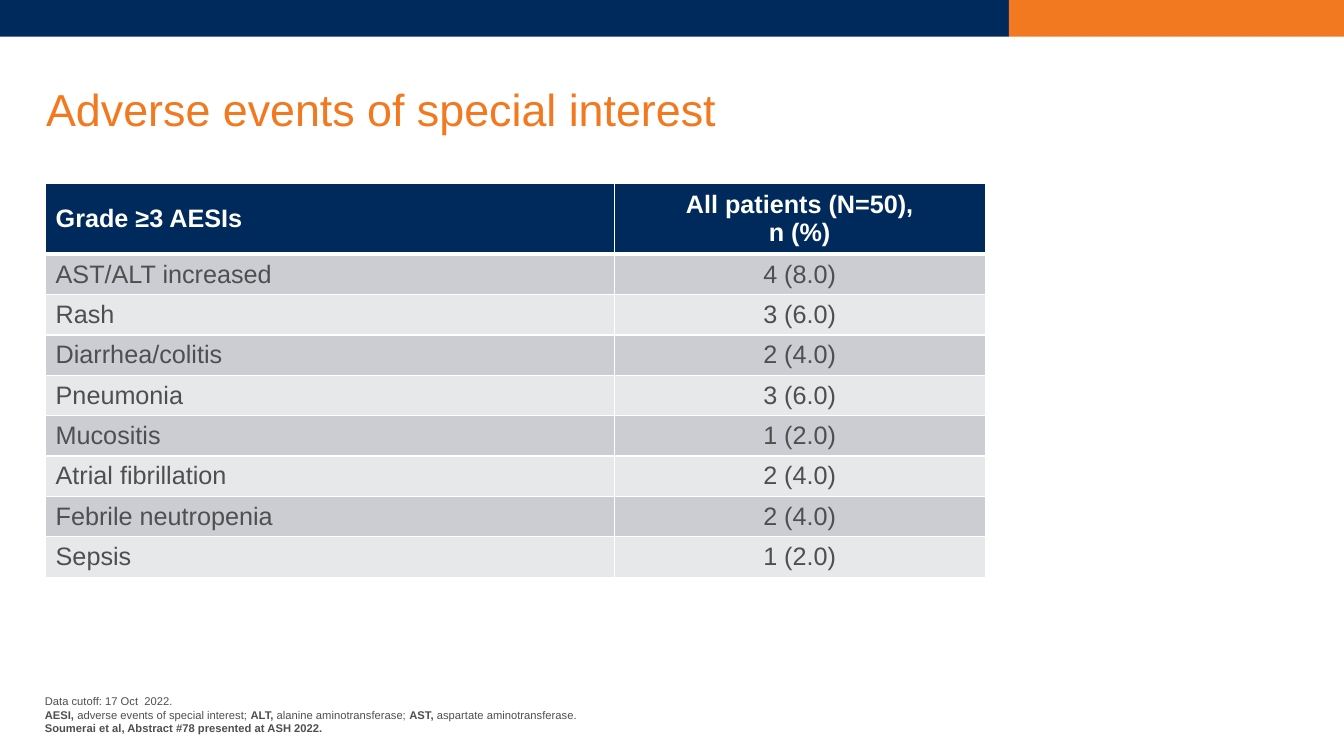
from lxml import etree
from pptx import Presentation
from pptx.dml.color import RGBColor
from pptx.enum.shapes import MSO_SHAPE
from pptx.enum.text import MSO_ANCHOR, PP_ALIGN
from pptx.oxml.ns import qn
from pptx.util import Pt

RECT = MSO_SHAPE.RECTANGLE
MIDDLE, BOTTOM = MSO_ANCHOR.MIDDLE, MSO_ANCHOR.BOTTOM
LEFT, CENTER = PP_ALIGN.LEFT, PP_ALIGN.CENTER

NAVY, ORANGE, GREY, WHITE = "002A5C", "F37920", "4E4F4E", "FFFFFF"
BANDS = ["CCCDD2", "E7E8EA"]


def rgb(value):
    return RGBColor.from_string(value)


class SlideBuilder:
    font = "Arial"

    def __init__(self, slide):
        self.s = slide

    def bar(self, x, y, w, h, color):
        sp = self.s.shapes.add_shape(RECT, Pt(x), Pt(y), Pt(w), Pt(h))
        sp.shadow.inherit = False
        sp.fill.solid()
        sp.fill.fore_color.rgb = rgb(color)
        sp.line.fill.background()

    def fill_text(self, tf, paragraphs, size, color, align=LEFT, spacing=1.0):
        """Each paragraph is a list of (text, bold) runs."""
        for i, runs in enumerate(paragraphs):
            p = tf.add_paragraph() if i else tf.paragraphs[0]
            p.alignment, p.line_spacing = align, spacing
            for text, bold in runs:
                r = p.add_run()
                r.text = text
                formats = {"name": self.font, "size": Pt(size), "bold": bold}
                for name, value in formats.items():
                    setattr(r.font, name, value)
                r.font.color.rgb = rgb(color)

    def text(self, x, y, w, h, paragraphs, size, color, anchor, spacing=1.0):
        tf = self.s.shapes.add_textbox(Pt(x), Pt(y), Pt(w), Pt(h)).text_frame
        formats = {"word_wrap": True, "vertical_anchor": anchor,
                   "margin_left": 0, "margin_right": 0,
                   "margin_top": 0, "margin_bottom": 0}
        for name, value in formats.items():
            setattr(tf, name, value)
        self.fill_text(tf, paragraphs, size, color, spacing=spacing)

    def borders(self, cell, widths):
        tcPr = cell._tc.get_or_add_tcPr()
        for i, (side, width) in enumerate(widths.items()):
            ln = etree.Element(qn("a:ln" + side), w=str(Pt(width)))
            fill = etree.SubElement(ln, qn("a:solidFill"))
            etree.SubElement(fill, qn("a:srgbClr"), val=WHITE)
            tcPr.insert(i, ln)

    def table(self, x, y, col_widths, head_height, row_height, rows, size):
        heights = [head_height] + [row_height] * (len(rows) - 1)
        table = self.s.shapes.add_table(
            len(rows), len(col_widths), Pt(x), Pt(y),
            Pt(sum(col_widths)), Pt(sum(heights))).table
        for column, width in zip(table.columns, col_widths):
            column.width = Pt(width)
        for i, values in enumerate(rows):
            table.rows[i].height = Pt(heights[i])
            head = i == 0
            for j, value in enumerate(values):
                cell = table.cell(i, j)
                cell.vertical_anchor = MIDDLE
                cell.fill.solid()
                cell.fill.fore_color.rgb = rgb(NAVY if head else BANDS[(i - 1) % 2])
                self.borders(cell, {"L": 1, "R": 1, "T": 3 if i == 1 else 1,
                                    "B": 3 if head else 1})
                self.fill_text(cell.text_frame,
                               [[(line, head)] for line in value.split("\n")],
                               size, WHITE if head else GREY, CENTER if j else LEFT)


def main():
    prs = Presentation()
    prs.slide_width, prs.slide_height = Pt(960), Pt(540)
    b = SlideBuilder(prs.slides.add_slide(prs.slide_layouts[6]))

    # Top band
    b.bar(0, 0, 720.7, 26.2, NAVY)
    b.bar(720.7, 0, 239.3, 26.2, ORANGE)

    # Footnotes
    b.text(32, 494.6, 672, 30.2, [
        [("Data cutoff: 17 Oct  2022.", False)],
        [("AESI, ", True), ("adverse events of special interest; ", False),
         ("ALT, ", True), ("alanine aminotransferase; ", False),
         ("AST, ", True), ("aspartate aminotransferase.", False)],
        [("Soumerai et al, Abstract #78 presented at ASH 2022.", True)],
    ], 8, GREY, BOTTOM)

    # Title
    b.text(33, 45.4, 895, 69.8, [[("Adverse events of special interest", False)]],
           32, ORANGE, MIDDLE, spacing=0.9)

    # Adverse events table
    b.table(32.6, 131.2, [406.1, 265], 48.2, 28.05, [
        ("Grade ≥3 AESIs", "All patients (N=50),\nn (%)"),
        ("AST/ALT increased", "4 (8.0)"),
        ("Rash", "3 (6.0)"),
        ("Diarrhea/colitis", "2 (4.0)"),
        ("Pneumonia", "3 (6.0)"),
        ("Mucositis", "1 (2.0)"),
        ("Atrial fibrillation", "2 (4.0)"),
        ("Febrile neutropenia", "2 (4.0)"),
        ("Sepsis", "1 (2.0)"),
    ], 18)

    prs.save("out.pptx")


if __name__ == "__main__":
    main()
